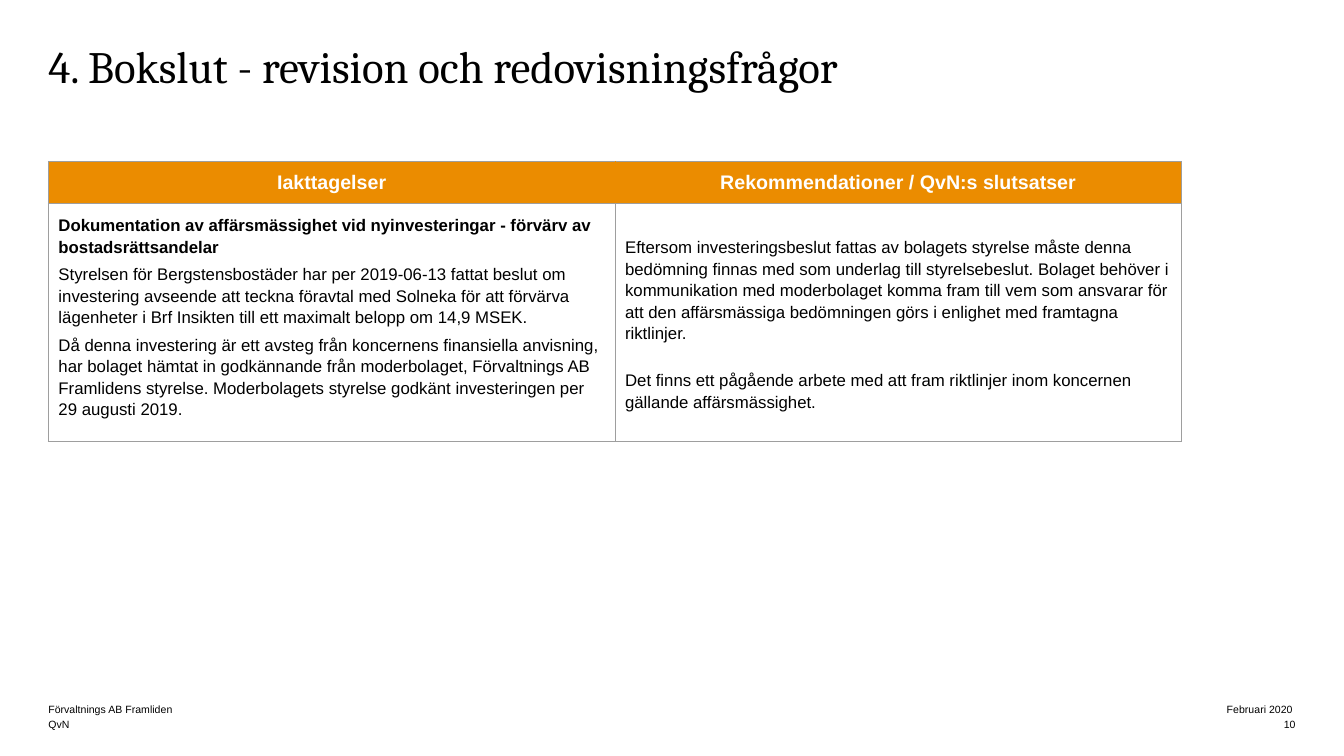
from dataclasses import dataclass

from lxml.etree import SubElement
from pptx import Presentation
from pptx.dml.color import RGBColor
from pptx.enum.text import MSO_ANCHOR, MSO_AUTO_SIZE, PP_ALIGN
from pptx.oxml.ns import qn
from pptx.util import Inches, Pt


@dataclass(frozen=True)
class Theme:
    heading_font: str = "Cambria"
    body_font: str = "Arial"
    ink: str = "000000"
    paper: str = "FFFFFF"
    accent: str = "EB8C00"
    rule: str = "9E9E9E"
    title_size: float = 32
    header_size: float = 14
    body_size: float = 12
    footer_size: float = 7.5
    rule_width: float = 0.75
    cell_inset: float = 0.1


@dataclass(frozen=True)
class Passage:
    wording: str
    bold: bool = False
    before: float = 4
    after: float = 0


class ReportSlide:
    def __init__(self, deck, theme):
        self.theme = theme
        self.width, self.height = deck.slide_width, deck.slide_height
        self.slide = deck.slides.add_slide(deck.slide_layouts[5])

    def x(self, percent):
        return round(self.width * percent / 100)

    def y(self, percent):
        return round(self.height * percent / 100)

    def box(self, left, top, width, height):
        return self.x(left), self.y(top), self.x(width), self.y(height)

    def add_text(self, paragraph, wording, size, color=None, font=None, bold=False):
        run = paragraph.add_run()
        run.text = wording
        run.font.size = Pt(size)
        run.font.name = font or self.theme.body_font
        run.font.bold = bold
        run.font.color.rgb = RGBColor.from_string(color or self.theme.ink)

    def prepare(self, frame, anchor):
        frame.margin_left = frame.margin_right = 0
        frame.margin_top = frame.margin_bottom = 0
        frame.word_wrap = True
        frame.auto_size = MSO_AUTO_SIZE.NONE
        frame.vertical_anchor = anchor
        return frame.paragraphs[0]

    def title(self, wording, area):
        heading = self.slide.shapes.title
        heading.left, heading.top, heading.width, heading.height = self.box(*area)
        paragraph = self.prepare(heading.text_frame, MSO_ANCHOR.TOP)
        paragraph.alignment = PP_ALIGN.LEFT
        paragraph.line_spacing = 0.85
        paragraph.space_before = Pt(0)
        self.add_text(paragraph, wording, self.theme.title_size, font=self.theme.heading_font)

    def footer(self, wording, area, alignment):
        note = self.slide.shapes.add_textbox(*self.box(*area))
        paragraph = self.prepare(note.text_frame, MSO_ANCHOR.BOTTOM)
        paragraph.alignment = alignment
        self.add_text(paragraph, wording, self.theme.footer_size)

    def border(self, cell, colors):
        properties = cell._tc.get_or_add_tcPr()
        for side, color in zip("LRTB", colors):
            line = SubElement(properties, qn(f"a:ln{side}"), w=str(Pt(self.theme.rule_width)))
            fill = SubElement(line, qn("a:solidFill"))
            SubElement(fill, qn("a:srgbClr"), val=color)

    def inset(self, cell, top=0):
        margin = Inches(self.theme.cell_inset)
        cell.margin_left = cell.margin_right = cell.margin_bottom = margin
        cell.margin_top = margin + self.y(top)
        cell.vertical_anchor = MSO_ANCHOR.TOP

    def header_cell(self, cell, wording, colors):
        self.inset(cell)
        self.border(cell, colors)
        cell.fill.solid()
        cell.fill.fore_color.rgb = RGBColor.from_string(self.theme.accent)
        paragraph = cell.text_frame.paragraphs[0]
        paragraph.alignment = PP_ALIGN.CENTER
        self.add_text(paragraph, wording, self.theme.header_size, self.theme.paper, bold=True)

    def body_cell(self, cell, passages, top):
        self.inset(cell, top)
        self.border(cell, [self.theme.rule] * 4)
        cell.fill.background()
        frame = cell.text_frame
        for index, passage in enumerate(passages):
            paragraph = frame.add_paragraph() if index else frame.paragraphs[0]
            paragraph.line_spacing = 1.15
            paragraph.space_before = Pt(passage.before)
            paragraph.space_after = Pt(passage.after)
            self.add_text(paragraph, passage.wording, self.theme.body_size, bold=passage.bold)

    def table(self, headings, columns, left, top, column_width, row_heights, drops):
        count = len(headings)
        area = self.box(left, top, column_width * count, sum(row_heights))
        table = self.slide.shapes.add_table(2, count, *area).table
        table.horz_banding = False
        for row, height in zip(table.rows, row_heights):
            row.height = self.y(height)
        rule, accent = self.theme.rule, self.theme.accent
        for index, (heading, passages) in enumerate(zip(headings, columns)):
            table.columns[index].width = self.x(column_width)
            left_rule = accent if index else rule
            right_rule = accent if index < count - 1 else rule
            self.header_cell(table.cell(0, index), heading, [left_rule, right_rule, rule, rule])
            self.body_cell(table.cell(1, index), passages, drops[index])


OBSERVATIONS = [
    Passage(
        "Dokumentation av affärsmässighet vid nyinvesteringar - förvärv av "
        "bostadsrättsandelar",
        bold=True,
    ),
    Passage(
        "Styrelsen för Bergstensbostäder har per 2019-06-13 fattat beslut om "
        "investering avseende att teckna föravtal med Solneka för att förvärva "
        "lägenheter i Brf Insikten till ett maximalt belopp om 14,9 MSEK."
    ),
    Passage(
        "Då denna investering är ett avsteg från koncernens finansiella anvisning, "
        "har bolaget hämtat in godkännande från moderbolaget, Förvaltnings AB "
        "Framlidens styrelse. Moderbolagets styrelse godkänt investeringen per "
        "29 augusti 2019.",
        after=2,
    ),
]

RECOMMENDATIONS = [
    Passage(
        "Eftersom investeringsbeslut fattas av bolagets styrelse måste denna "
        "bedömning finnas med som underlag till styrelsebeslut. Bolaget behöver i "
        "kommunikation med moderbolaget komma fram till vem som ansvarar för "
        "att den affärsmässiga bedömningen görs i enlighet med framtagna riktlinjer."
    ),
    Passage(
        "Det finns ett pågående arbete med att fram riktlinjer inom koncernen "
        "gällande affärsmässighet.",
        before=18,
    ),
]


def main():
    deck = Presentation()
    deck.slide_width, deck.slide_height = Inches(13.33), Inches(7.5)
    page = ReportSlide(deck, Theme())
    margin = 3.6
    page.title("4. Bokslut - revision och redovisningsfrågor", (margin, 6.27, 92.72, 13.07))
    page.table(
        ["Iakttagelser", "Rekommendationer / QvN:s slutsatser"],
        [OBSERVATIONS, RECOMMENDATIONS],
        left=margin,
        top=21.33,
        column_width=42.16,
        row_heights=[5.6, 31.5],
        drops=[0, 2.87],
    )
    footer_lines = [("Förvaltnings AB Framliden", "Februari 2020 "), ("QvN", "10")]
    for line, (sender, reference) in enumerate(footer_lines):
        top = 92.67 + 2 * line
        page.footer(sender, (margin, top, 44.94, 2), PP_ALIGN.LEFT)
        page.footer(reference, (67.44, top, 28.96, 2), PP_ALIGN.RIGHT)
    deck.save("out.pptx")


if __name__ == "__main__":
    main()
